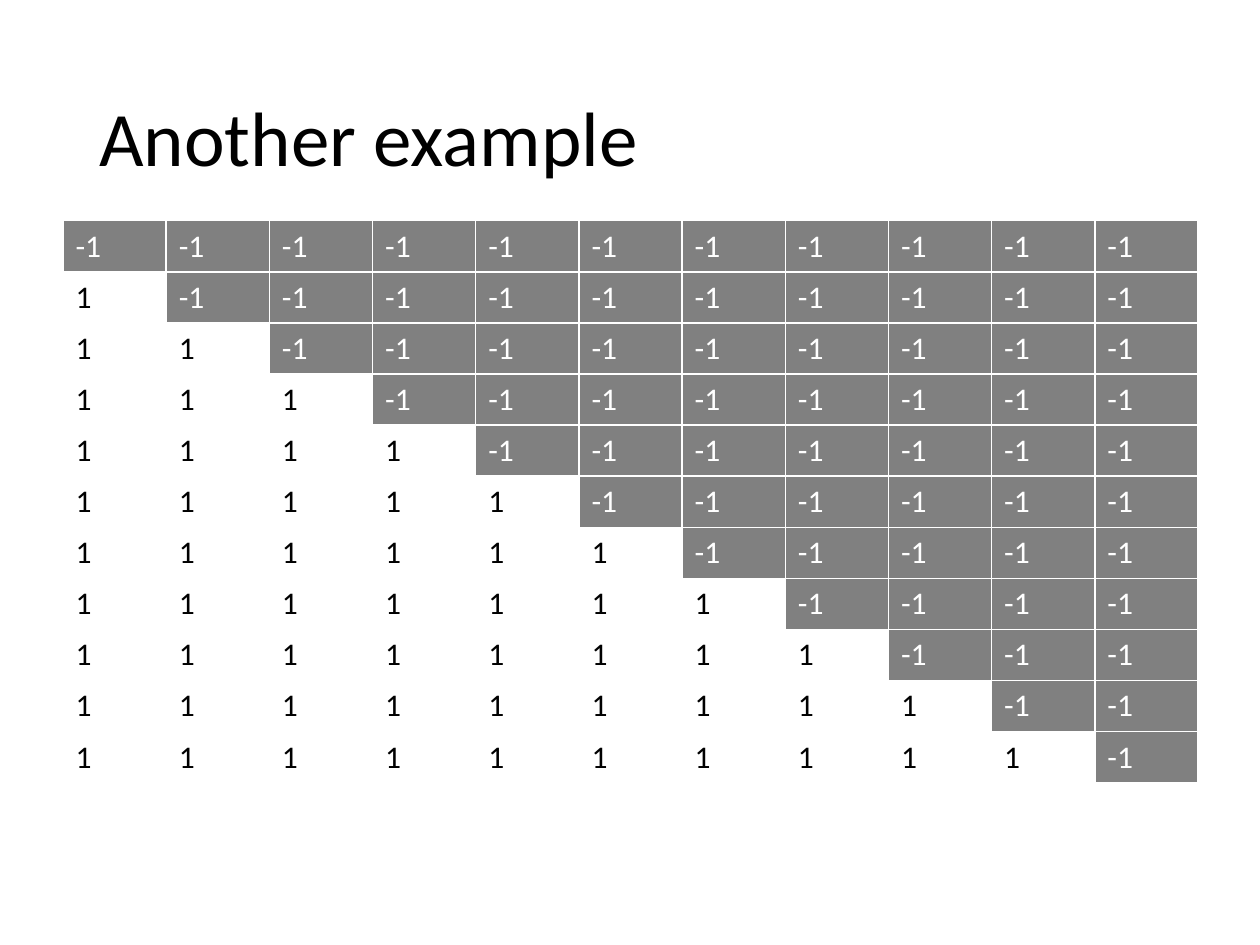
from pptx import Presentation
from pptx.dml.color import RGBColor
from pptx.enum.text import MSO_ANCHOR, PP_ALIGN
from pptx.oxml.ns import qn
from pptx.util import Cm, Pt
from lxml import etree

BLACK = RGBColor(0x00, 0x00, 0x00)
WHITE = RGBColor(0xFF, 0xFF, 0xFF)
GRAY = RGBColor(0x80, 0x80, 0x80)
MIDDLE = MSO_ANCHOR.MIDDLE
LEFT = PP_ALIGN.LEFT
TITLE_ONLY = 5
MATRIX_SIZE = 11


class SlideBuilder:
    """Holds the text style and the current slide, and adds its elements."""

    def __init__(self, slide, font_name="Calibri"):
        self.slide = slide
        self.font_name = font_name

    def set_text(self, frame, text, size, color):
        frame.text = text
        paragraph = frame.paragraphs[0]
        paragraph.alignment = LEFT
        font = paragraph.runs[0].font
        formats = {"name": self.font_name, "size": Pt(size), "bold": False}
        for attribute, value in formats.items():
            setattr(font, attribute, value)
        font.color.rgb = color
        return paragraph

    def title(self, text, left, top, width, height):
        heading = self.slide.shapes.title
        box = {"left": left, "top": top, "width": width, "height": height}
        for attribute, value in box.items():
            setattr(heading, attribute, Cm(value))
        heading.text_frame.vertical_anchor = MIDDLE
        self.set_text(heading.text_frame, text, 44, BLACK).line_spacing = 0.9

    def border(self, cell, color, width):
        properties = cell._tc.get_or_add_tcPr()
        for side in ("a:lnL", "a:lnR", "a:lnT", "a:lnB"):
            line = etree.SubElement(properties, qn(side), w=str(Pt(width)))
            fill = etree.SubElement(line, qn("a:solidFill"))
            etree.SubElement(fill, qn("a:srgbClr"), val=str(color))

    def sign_matrix(self, size, left, top, column_width, row_height):
        matrix = self.slide.shapes.add_table(
            size, size, Cm(left), Cm(top),
            Cm(column_width * size), Cm(row_height * size)).table
        matrix.first_row = matrix.horz_banding = False
        for column in matrix.columns:
            column.width = Cm(column_width)
        for i, row in enumerate(matrix.rows):
            row.height = Cm(row_height)
            for j, cell in enumerate(row.cells):
                negative = j >= i
                self.border(cell, WHITE, 1)
                cell.fill.solid()
                cell.fill.fore_color.rgb = GRAY if negative else WHITE
                self.set_text(cell.text_frame, "-1" if negative else "1", 18,
                              WHITE if negative else BLACK)


def main():
    presentation = Presentation()
    presentation.slide_width = Cm(25.4)
    presentation.slide_height = Cm(19.05)
    layout = presentation.slide_layouts[TITLE_ONLY]
    builder = SlideBuilder(presentation.slides.add_slide(layout))
    builder.title("Another example", 1.75, 1.02, 21.9, 3.68)
    builder.sign_matrix(MATRIX_SIZE, 1.27, 4.45, 2.08, 1.03)
    presentation.save("out.pptx")


if __name__ == "__main__":
    main()
